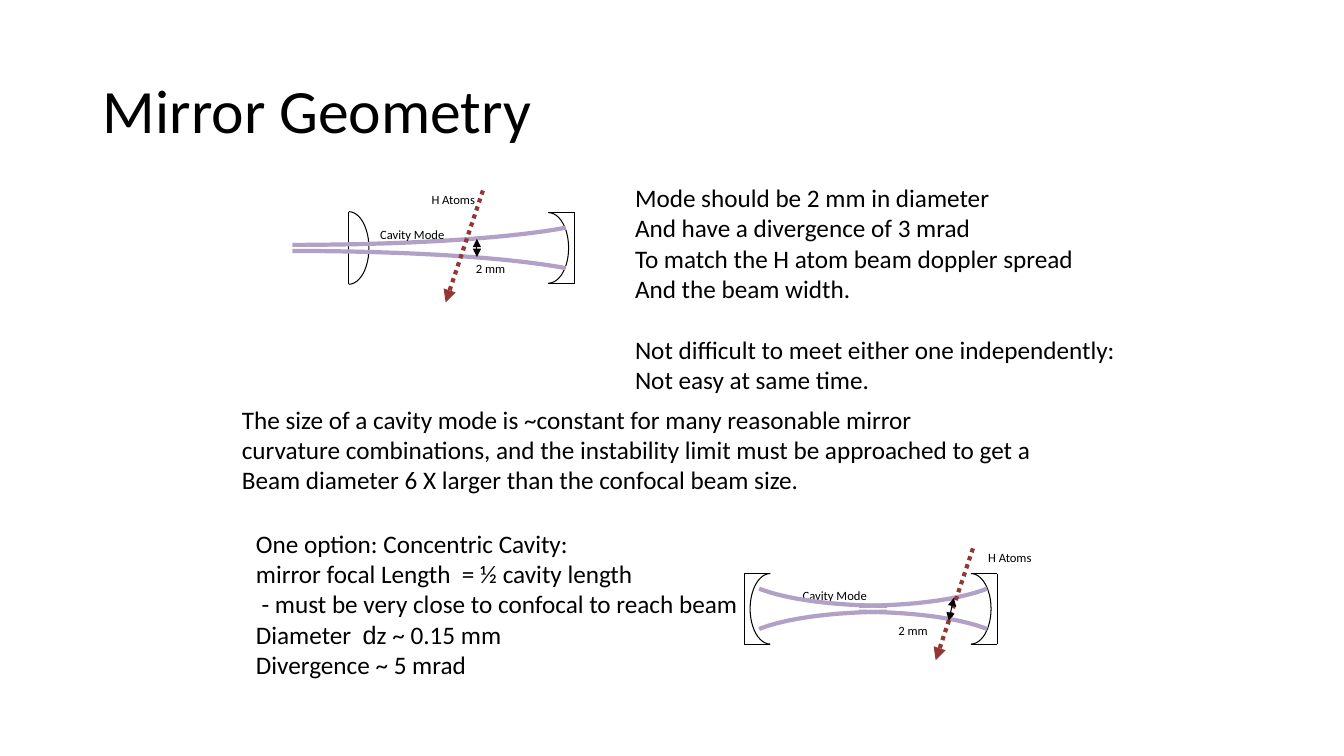
from math import cos, pi, sin

from lxml import etree
from pptx import Presentation
from pptx.dml.color import RGBColor
from pptx.enum.dml import MSO_LINE
from pptx.enum.shapes import MSO_CONNECTOR
from pptx.enum.text import MSO_ANCHOR, PP_ALIGN
from pptx.oxml.ns import qn
from pptx.util import Inches, Pt

BLACK = RGBColor(0x00, 0x00, 0x00)
BEAM_COLOR = RGBColor(0xB2, 0xA1, 0xC7)
ATOM_COLOR = RGBColor(0x94, 0x36, 0x34)
STRAIGHT = MSO_CONNECTOR.STRAIGHT
DOTTED = MSO_LINE.ROUND_DOT
LEFT = PP_ALIGN.LEFT
MIDDLE = MSO_ANCHOR.MIDDLE
TOP = MSO_ANCHOR.TOP
FONT = "Calibri"
TITLE_ONLY = 5
CURVE_STEPS = 24
MIRROR_DEPTH = 0.2
MIRROR_THICKNESS = 0.26
MIRROR_HALF_HEIGHT = 0.35


def format_runs(paragraph, size):
    for run in paragraph.runs:
        run.font.name = FONT
        run.font.size = Pt(size)
        run.font.color.rgb = BLACK


def add_text(shapes, box, lines, size=18, insets=(0.1, 0.05)):
    text_box = shapes.add_textbox(*map(Inches, box))
    frame = text_box.text_frame
    frame.word_wrap = True
    frame.vertical_anchor = TOP
    frame.margin_left = frame.margin_right = Inches(insets[0])
    frame.margin_top = frame.margin_bottom = Inches(insets[1])
    frame.text = "\n".join(lines)
    for paragraph in frame.paragraphs:
        format_runs(paragraph, size)
    return frame


def add_label(shapes, left, top, text, width):
    add_text(shapes, (left, top, width, 0.24), [text], 9, (0.09, 0.04))


def add_line(shapes, start, end, color=BLACK, width=0.75, dash=None, arrows=()):
    """Draw a straight line; arrows names the ends (headEnd, tailEnd) that get one."""
    line = shapes.add_connector(STRAIGHT, *map(Inches, (*start, *end)))
    line.line.color.rgb = color
    line.line.width = Pt(width)
    if dash:
        line.line.dash_style = dash
    for arrow in arrows:
        etree.SubElement(line.line._get_or_add_ln(), qn("a:" + arrow), type="triangle")
    etree.SubElement(line._element.spPr, qn("a:effectLst"))


def add_curve(shapes, points, color=BLACK, width=0.75):
    points = [(Inches(x), Inches(y)) for x, y in points]
    builder = shapes.build_freeform(*points[0], scale=1.0)
    builder.add_line_segments(points[1:], close=False)
    curve = builder.convert_to_shape()
    curve.fill.background()
    curve.line.color.rgb = color
    curve.line.width = Pt(width)
    curve.shadow.inherit = False


def add_arc(shapes, x, y, half_height, direction):
    """Draw half an ellipse that bulges to the right (1) or the left (-1)."""
    angles = [pi * step / CURVE_STEPS - pi / 2 for step in range(CURVE_STEPS + 1)]
    add_curve(shapes, [(x + direction * MIRROR_DEPTH * cos(angle),
                        y + half_height * sin(angle)) for angle in angles])


def add_mirror(shapes, x, y, direction):
    back = x + direction * MIRROR_THICKNESS
    top, bottom = y - MIRROR_HALF_HEIGHT, y + MIRROR_HALF_HEIGHT
    add_arc(shapes, x, y, MIRROR_HALF_HEIGHT, direction)
    add_line(shapes, (back, top), (back, bottom))
    for edge in (top, bottom):
        add_line(shapes, (x, edge), (back, edge))


def add_beam(shapes, x, y, length):
    """Draw both edges of a beam that widens from its waist; a negative length goes left."""
    for side in (-1, 1):
        points = []
        for step in range(CURVE_STEPS + 1):
            t = step / CURVE_STEPS
            inner, outer = 3 * t * (1 - t) ** 2, 3 * t ** 2 * (1 - t)
            along = 0.4 * inner + 0.78 * outer + t ** 3
            spread = 0.35 * outer + t ** 3
            points.append((x + length * along, y + side * (0.03 + 0.17 * spread)))
        add_curve(shapes, points, BEAM_COLOR, 3)


def add_atom_path(shapes, x, y):
    add_line(shapes, (x, y), (x - 0.37, y + 1.11), ATOM_COLOR, 3, DOTTED, ["tailEnd"])


def add_width_arrow(shapes, start, end):
    add_line(shapes, start, end, arrows=["headEnd", "tailEnd"])


def add_lens_cavity(slide, left, top):
    shapes = slide.shapes.add_group_shape().shapes
    axis = top + 0.6
    lens = left + 0.56
    add_arc(shapes, lens, axis, 0.36, 1)
    add_line(shapes, (lens, axis - 0.36), (lens, axis + 0.36))
    add_mirror(shapes, left + 2.54, axis, 1)
    add_beam(shapes, left, axis, 2.71)
    add_atom_path(shapes, left + 1.89, top + 0.03)
    add_width_arrow(shapes, (left + 1.83, axis + 0.09), (left + 1.83, axis - 0.09))
    add_label(shapes, left + 1.73, top + 0.69, "2 mm", 0.49)
    add_label(shapes, left + 1.29, top, "H Atoms", 0.72)
    add_label(shapes, left + 0.78, top + 0.35, "Cavity Mode", 0.84)


def add_concentric_cavity(slide, left, top):
    shapes = slide.shapes.add_group_shape().shapes
    axis = top + 0.62
    waist = left + 1.28
    add_mirror(shapes, left + 2.25, axis, 1)
    add_beam(shapes, waist - 0.14, axis, 1.27)
    add_atom_path(shapes, left + 2.27, top + 0.02)
    add_width_arrow(shapes, (left + 2.03, axis + 0.12), (left + 2.08, axis - 0.11))
    add_label(shapes, left + 1.44, top + 0.72, "2 mm", 0.49)
    add_label(shapes, left + 2.33, top, "H Atoms", 0.72)
    add_label(shapes, left + 0.49, top + 0.37, "Cavity Mode", 0.84)
    add_mirror(shapes, left + 0.26, axis, -1)
    add_beam(shapes, waist + 0.14, axis, -1.27)


def add_title(slide, box):
    title = slide.shapes.title
    title.left, title.top, title.width, title.height = map(Inches, box)
    title.text_frame.text = "Mirror Geometry"
    title.text_frame.vertical_anchor = MIDDLE
    paragraph = title.text_frame.paragraphs[0]
    paragraph.alignment = LEFT
    paragraph.line_spacing = 0.9
    format_runs(paragraph, 44)


def add_requirements(slide, box):
    frame = add_text(slide.shapes, box, [
        "Mode should be 2 mm in diameter",
        "And have a divergence of 3 mrad",
        "To match the H atom beam doppler spread",
        "And the beam width.",
        "Not difficult to meet either one independently:",
        "Not easy at same time.",
    ])
    frame.paragraphs[4].space_before = Pt(22)


def add_mode_size(slide, box):
    add_text(slide.shapes, box, [
        "The size of a cavity mode is ~constant for many reasonable mirror",
        "curvature combinations, and the instability limit must be approached to get a",
        "Beam diameter 6 X larger than the confocal beam size.",
    ])


def add_concentric_option(slide, box):
    frame = add_text(slide.shapes, box, [
        "One option: Concentric Cavity:",
        "mirror focal Length  = ½ cavity length",
        " - must be very close to confocal to reach beam",
        "Diameter  ",
        "Divergence ~ 5 mrad",
    ])
    diameter = frame.paragraphs[3]
    for text in ("d", "z ~ 0.15 mm"):
        diameter.add_run().text = text
    format_runs(diameter, 18)
    diameter.runs[1].font.name = "Arial"


def main():
    presentation = Presentation()
    presentation.slide_width = Inches(13.33)
    presentation.slide_height = Inches(7.5)
    slide = presentation.slides.add_slide(presentation.slide_layouts[TITLE_ONLY])
    add_title(slide, (0.92, 0.4, 11.5, 1.45))
    add_lens_cavity(slide, 2.9, 1.86)
    add_requirements(slide, (6.2, 1.76, 5.03, 2.22))
    add_mode_size(slide, (2.3, 3.96, 8.18, 1.01))
    add_concentric_option(slide, (2.44, 5.19, 5.04, 1.62))
    add_concentric_cavity(slide, 7.38, 5.42)
    presentation.save("out.pptx")


if __name__ == "__main__":
    main()
